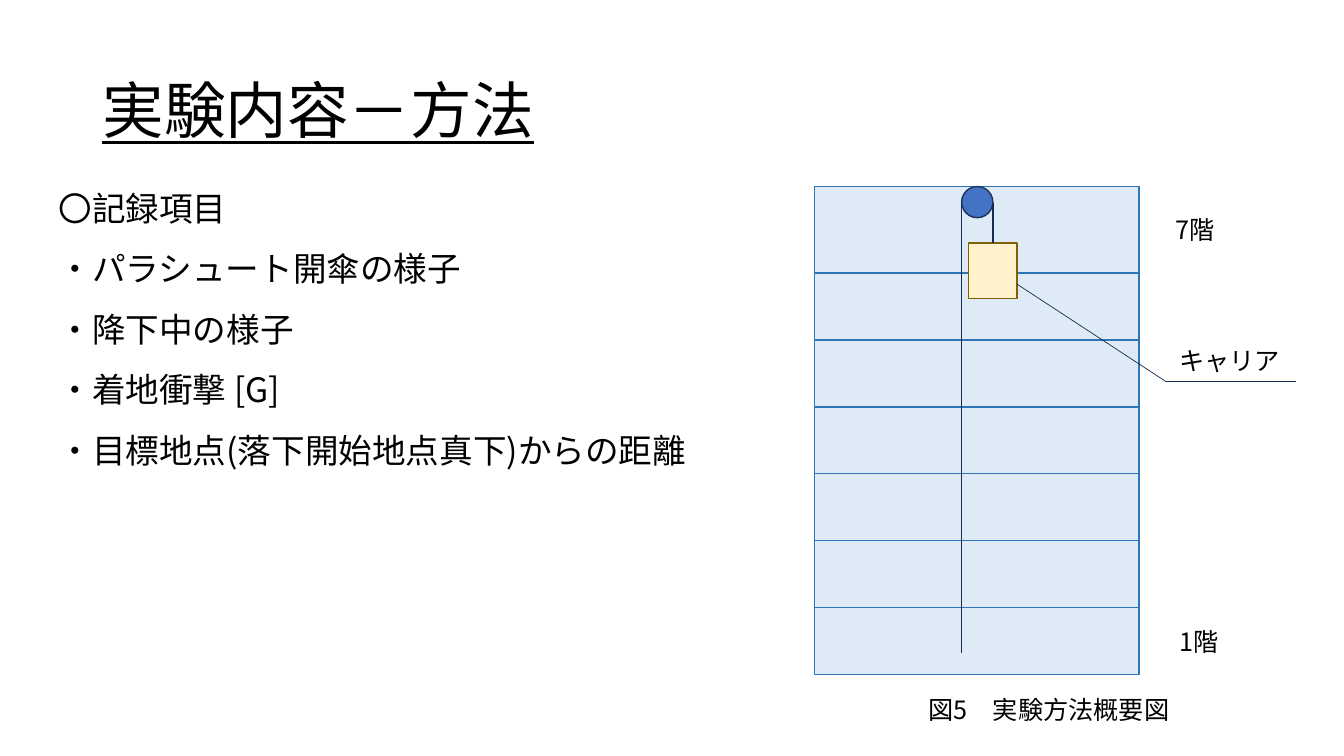
import pptx
import pptx.dml.color
import pptx.enum.shapes
import pptx.enum.text
import pptx.oxml
import pptx.oxml.ns
import pptx.util
from lxml import etree

Pt = pptx.util.Pt
RGBColor = pptx.dml.color.RGBColor
MSO_SHAPE = pptx.enum.shapes.MSO_SHAPE
PP_ALIGN = pptx.enum.text.PP_ALIGN
MSO_ANCHOR = pptx.enum.text.MSO_ANCHOR
qn = pptx.oxml.ns.qn

FONT = "Noto Sans CJK JP"
BLACK = RGBColor(0x00, 0x00, 0x00)
FLOOR_FILL = RGBColor(0xDE, 0xEB, 0xF7)
FLOOR_LINE = RGBColor(0x2E, 0x75, 0xB6)
PULLEY_FILL = RGBColor(0x44, 0x72, 0xC4)
PULLEY_LINE = RGBColor(0x1E, 0x32, 0x56)
CARRIER_FILL = RGBColor(0xFF, 0xF2, 0xCC)
CARRIER_LINE = RGBColor(0x80, 0x60, 0x00)
ROPE = RGBColor(0x17, 0x2C, 0x51)

RECORD_ITEMS = [
    "〇記録項目",
    "・パラシュート開傘の様子",
    "・降下中の様子",
    "・着地衝撃 [G]",
    "・目標地点(落下開始地点真下)からの距離",
]

FLOOR_LEFT, FLOOR_WIDTH = 581.8, 231.8
TOP_FLOOR_TOP, TOP_FLOOR_HEIGHT = 133.2, 61.9
FLOOR_HEIGHT = 47.75
LOWER_FLOORS = 6


def set_attributes(target, values):
    for name, value in values.items():
        setattr(target, name, value)


def place(shape, left, top, width, height):
    set_attributes(shape, {"left": Pt(left), "top": Pt(top),
                           "width": Pt(width), "height": Pt(height)})


def write_paragraph(para, text, size, underline=None, **layout):
    """Fill a paragraph, with the font set for Latin and Japanese letters."""
    set_attributes(para, {"space_before": Pt(0), "line_spacing": 1.0, **layout})
    span = para.add_run()
    span.text = text
    set_attributes(span.font, {"name": FONT, "size": Pt(size), "underline": underline})
    span.font.color.rgb = BLACK
    latin = span.font._element.find(qn("a:latin"))
    east_asian = etree.Element(qn("a:ea"), typeface=FONT)
    latin.addnext(east_asian)


def fill_title(title, text):
    place(title, 66, 28.8, 828, 104.4)
    frame = title.text_frame
    set_attributes(frame, {"word_wrap": True, "vertical_anchor": MSO_ANCHOR.MIDDLE,
                           "auto_size": pptx.enum.text.MSO_AUTO_SIZE.NONE})
    write_paragraph(frame.paragraphs[0], text, 44, underline=True,
                    line_spacing=0.9, alignment=PP_ALIGN.LEFT)


def fill_list(body, items):
    place(body, 34.6, 126.7, 476.6, 218.2)
    frame = body.text_frame
    set_attributes(frame, {"word_wrap": True, "vertical_anchor": MSO_ANCHOR.TOP,
                           "auto_size": pptx.enum.text.MSO_AUTO_SIZE.NONE,
                           "margin_left": Pt(7.2), "margin_right": Pt(7.2),
                           "margin_top": Pt(7.2), "margin_bottom": Pt(7.2)})
    for index, item in enumerate(items):
        para = frame.add_paragraph() if index else frame.paragraphs[0]
        properties = para._p.get_or_add_pPr()
        properties.set("marL", "0")
        properties.set("indent", "0")
        etree.SubElement(properties, qn("a:buNone"))
        write_paragraph(para, item, 24, line_spacing=1.5 if index else 1.0)


def add_label(page, text, left, top, width, alignment=PP_ALIGN.LEFT):
    box = page.shapes.add_textbox(Pt(left), Pt(top), Pt(width), Pt(29))
    box.text_frame.word_wrap = True
    write_paragraph(box.text_frame.paragraphs[0], text, 18, alignment=alignment)


def add_part(page, kind, left, top, width, height, fill, line):
    part = page.shapes.add_shape(kind, Pt(left), Pt(top), Pt(width), Pt(height))
    part.shadow.inherit = False
    part.fill.solid()
    part.fill.fore_color.rgb = fill
    part.line.color.rgb = line
    part.line.width = Pt(1)
    return part


def add_line(page, start, end, weight):
    line = page.shapes.add_connector(pptx.enum.shapes.MSO_CONNECTOR.STRAIGHT,
                                     *map(Pt, start + end))
    line.line.color.rgb = ROPE
    line.line.width = Pt(weight)
    etree.SubElement(line._element.spPr, qn("a:effectLst"))
    return line


def draw_building(page):
    def add_floor(top, height):
        add_part(page, MSO_SHAPE.RECTANGLE, FLOOR_LEFT, top, FLOOR_WIDTH, height,
                 FLOOR_FILL, FLOOR_LINE)

    add_floor(TOP_FLOOR_TOP, TOP_FLOOR_HEIGHT)
    for level in range(LOWER_FLOORS):
        add_floor(TOP_FLOOR_TOP + TOP_FLOOR_HEIGHT + level * FLOOR_HEIGHT, FLOOR_HEIGHT)
    add_label(page, "7階", 832.3, 149.8, 58.3)
    add_label(page, "1階", 835.2, 443.5, 58.3)


def draw_hoist(page):
    """Pulley, both ropes and the carrier with its callout."""
    add_part(page, MSO_SHAPE.OVAL, 686.9, 133.2, 22.3, 22.3, PULLEY_FILL, PULLEY_LINE)
    add_line(page, (686.9, 144.7), (686.9, 466.6), 1)
    carrier = add_part(page, MSO_SHAPE.RECTANGLE, 691.9, 173.7, 34.6, 39.7,
                       CARRIER_FILL, CARRIER_LINE)
    carrier_rope = add_line(page, (709.2, 144.7), (709.2, 173.7), 1)
    carrier_rope.end_connect(carrier, 0)
    callout_corner = (832.3, 272.2)
    add_line(page, (726.5, 203), callout_corner, 0.5)
    add_line(page, callout_corner, (925.9, 272.2), 0.5)
    add_label(page, "キャリア", 835.2, 243.4, 87.8)


def main():
    deck = pptx.Presentation()
    set_attributes(deck, {"slide_width": Pt(960), "slide_height": Pt(540)})
    page = deck.slides.add_slide(deck.slide_layouts[1])
    fill_title(page.shapes.title, "実験内容－方法")
    fill_list(page.placeholders[1], RECORD_ITEMS)
    draw_building(page)
    draw_hoist(page)
    add_label(page, "図5\u3000実験方法概要図".replace("\u3000", "　"), 607.7, 492.5, 283,
              PP_ALIGN.CENTER)
    deck.save("out.pptx")


if __name__ == "__main__":
    main()
